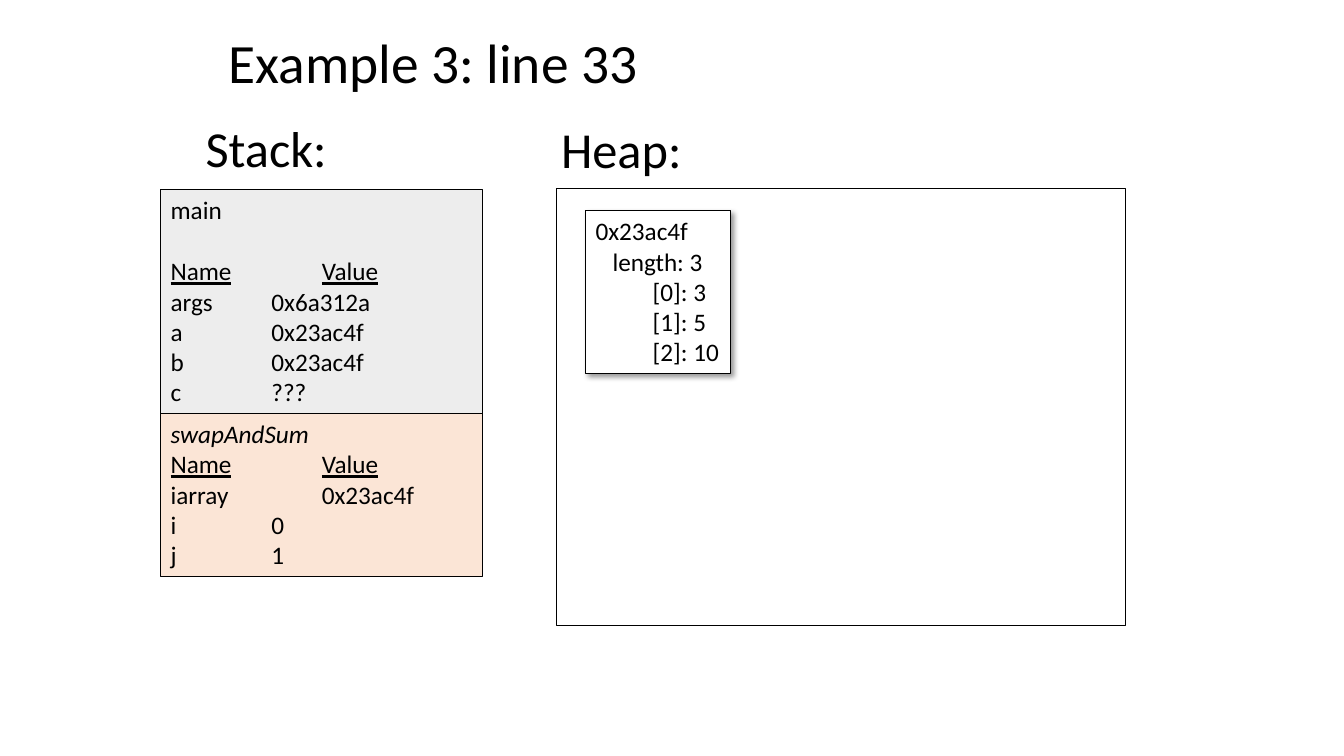
from lxml.etree import SubElement
from pptx import Presentation
from pptx.dml.color import RGBColor
from pptx.enum.shapes import MSO_SHAPE
from pptx.enum.text import MSO_ANCHOR, PP_ALIGN
from pptx.oxml.ns import qn
from pptx.util import Cm, Pt


def color(hex_value):
    return RGBColor.from_string(hex_value)


class MemoryDiagram:
    FONT = "Calibri"
    INK = "000000"
    BODY_SIZE = 18

    def __init__(self, slide):
        self.slide = slide

    def style(self, paragraph, size):
        paragraph.alignment = PP_ALIGN.LEFT
        for run in paragraph.runs:
            run.font.name = self.FONT
            run.font.size = Pt(size)
            run.font.color.rgb = color(self.INK)

    def heading(self, text, left, top, width, height, size):
        box = self.slide.shapes.add_textbox(Cm(left), Cm(top), Cm(width), Cm(height))
        frame = box.text_frame
        frame.word_wrap = True
        frame.vertical_anchor = MSO_ANCHOR.MIDDLE
        frame.text = text
        self.style(frame.paragraphs[0], size)
        return frame.paragraphs[0]

    def box(self, left, top, width, height, fill=None):
        rect = self.slide.shapes.add_shape(
            MSO_SHAPE.RECTANGLE, Cm(left), Cm(top), Cm(width), Cm(height))
        rect.shadow.inherit = False
        if fill:
            rect.fill.solid()
            rect.fill.fore_color.rgb = color(fill)
        else:
            rect.fill.background()
        rect.line.color.rgb = color(self.INK)
        rect.line.width = Pt(0.75)
        rect.text_frame.vertical_anchor = MSO_ANCHOR.TOP
        return rect

    def stack_frame(self, method, variables, left, top, width, height, fill, gap=0):
        frame = self.box(left, top, width, height, fill).text_frame
        frame.word_wrap = True
        frame.text = method
        frame.paragraphs[0].space_after = Pt(gap)

        # Underlined column headings
        header = frame.add_paragraph()
        for label in ("Name", "\t\t", "Value"):
            run = header.add_run()
            run.text = label
            run.font.underline = label != "\t\t"

        for name, value in variables:
            frame.add_paragraph().text = f"{name}\t\t{value}"
        for paragraph in frame.paragraphs:
            self.style(paragraph, self.BODY_SIZE)
        return frame.paragraphs[0]

    def heap_array(self, address, values, left, top, width, height):
        rect = self.box(left, top, width, height, "FFFFFF")
        self.drop_shadow(rect)
        frame = rect.text_frame
        frame.word_wrap = False
        lines = [(address, 0), (f"length: {len(values)}", 0.43)]
        lines += [(f"[{i}]: {value}", 1.44) for i, value in enumerate(values)]
        frame.text = "\n".join(text for text, _ in lines)
        for paragraph, (_, indent) in zip(frame.paragraphs, lines):
            paragraph._p.get_or_add_pPr().set("marL", str(Cm(indent)))
            self.style(paragraph, self.BODY_SIZE)

    def drop_shadow(self, rect):
        effects = rect._element.spPr.find(qn("a:effectLst"))
        shadow = SubElement(effects, qn("a:outerShdw"), blurRad=str(Pt(4)),
                            dist=str(Pt(3)), dir=str(45 * 60000),
                            algn="tl", rotWithShape="0")
        tint = SubElement(shadow, qn("a:srgbClr"), val=self.INK)
        SubElement(tint, qn("a:alpha"), val="40000")


def main():
    deck = Presentation()
    deck.slide_width, deck.slide_height = Cm(33.87), Cm(19.05)
    diagram = MemoryDiagram(deck.slides.add_slide(deck.slide_layouts[6]))

    # Headings
    title = diagram.heading("Example 3: line 33", 5.51, 0.76, 22.86, 1.78, 39.6)
    title.line_spacing = 0.9
    diagram.heading("Stack:", 4.93, 2.82, 3.56, 1.8, 36)
    diagram.heading("Heap:", 13.89, 2.84, 3.56, 1.8, 36)

    # Stack: one frame directly below the other
    array_address = "0x23ac4f"
    stack_left, stack_top, stack_width, main_height = 4.05, 4.78, 8.1, 5.64
    diagram.stack_frame(
        "main",
        [("args", "0x6a312a"), ("a", array_address), ("b", array_address), ("c", "???")],
        stack_left, stack_top, stack_width, main_height, "EDEDED", gap=22)
    swap_name = diagram.stack_frame(
        "swapAndSum", [("iarray", array_address), ("i", 0), ("j", 1)],
        stack_left, stack_top + main_height, stack_width, 4.11, "FBE5D6")
    swap_name.runs[0].font.italic = True

    # Heap with the shared array
    diagram.box(14.02, 4.75, 14.35, 11.02)
    diagram.heap_array(array_address, [3, 5, 10], 14.76, 5.31, 3.66, 4.11)

    deck.save("out.pptx")


if __name__ == "__main__":
    main()
